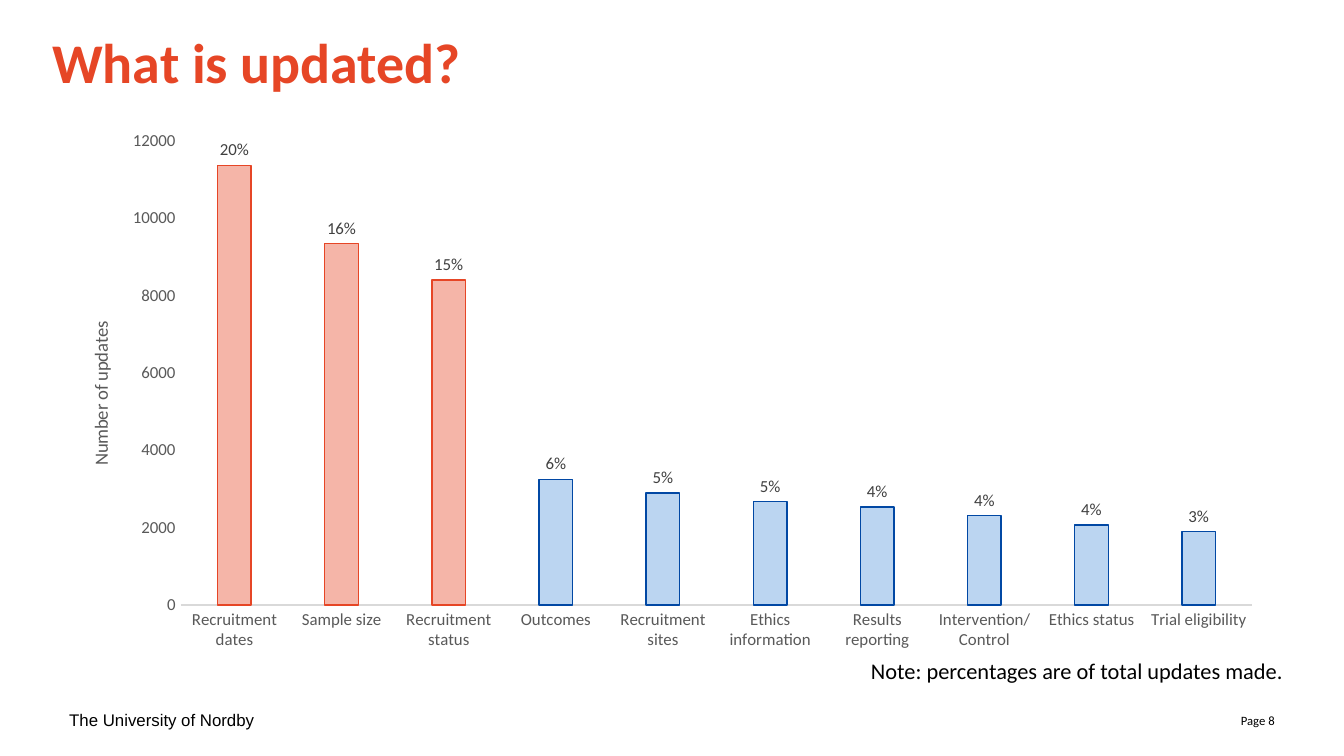
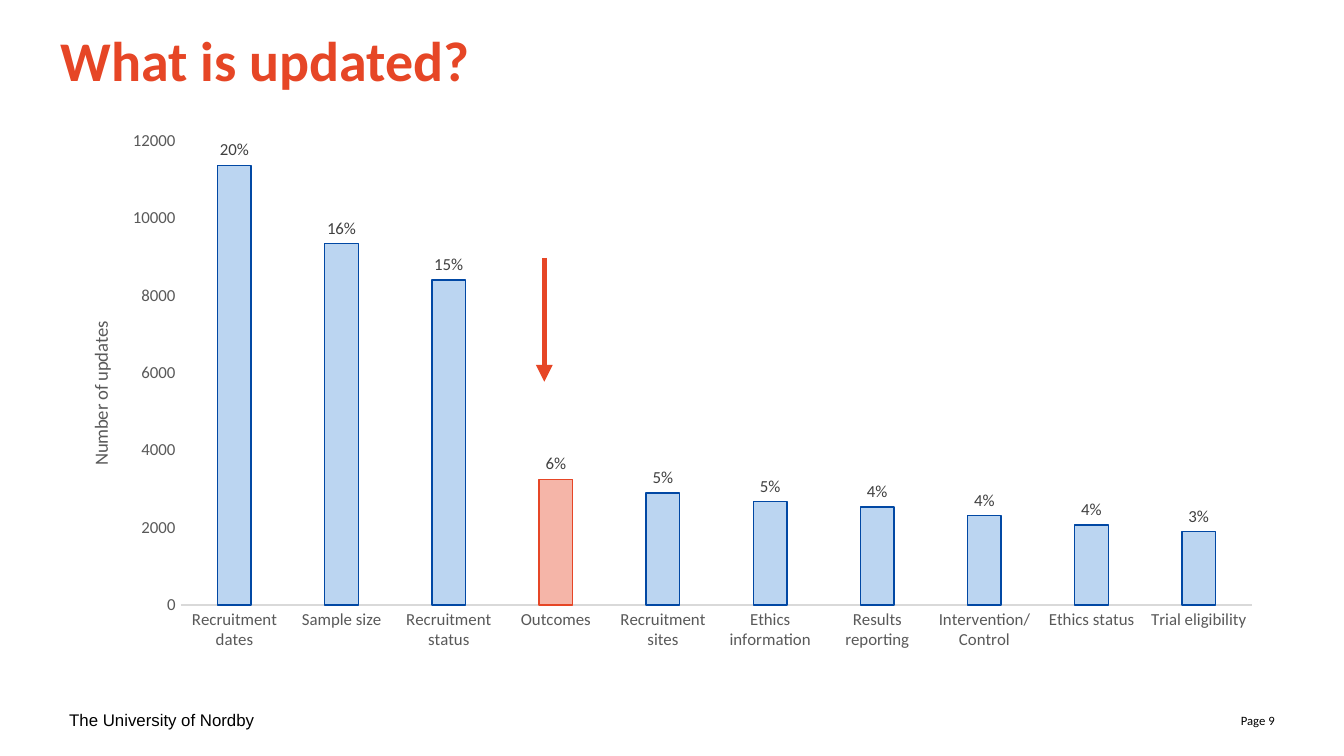
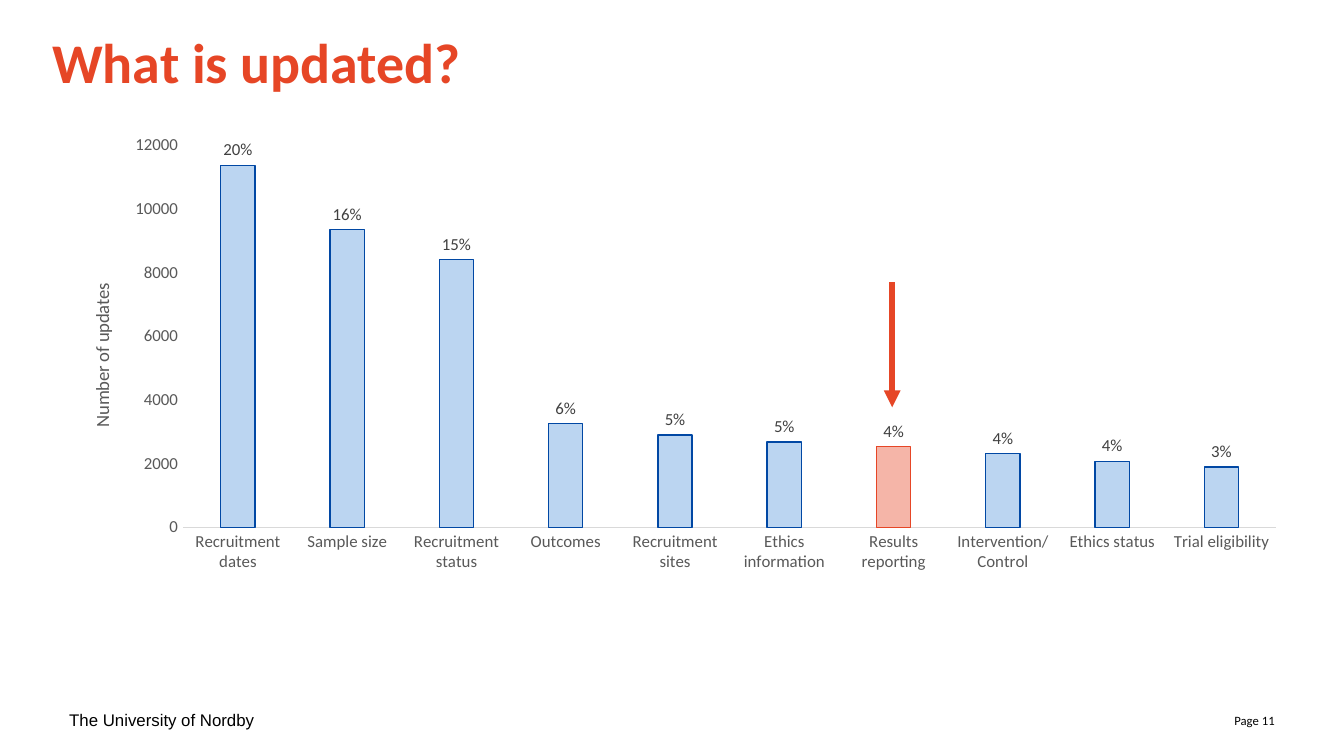
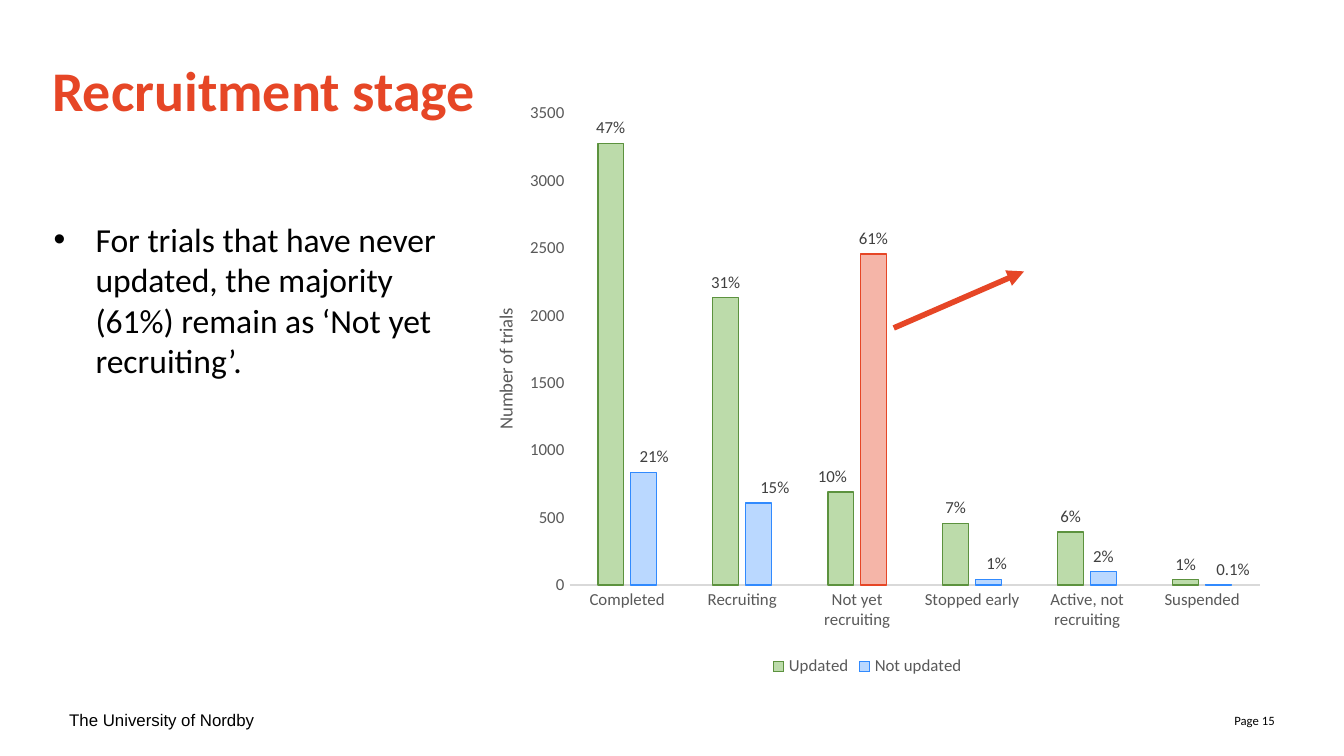
from lxml import etree
from pptx import Presentation
from pptx.chart.data import CategoryChartData
from pptx.dml.color import RGBColor
from pptx.enum.chart import XL_CHART_TYPE, XL_LABEL_POSITION, XL_LEGEND_POSITION, XL_TICK_MARK
from pptx.enum.shapes import MSO_CONNECTOR
from pptx.enum.text import MSO_ANCHOR, PP_ALIGN
from pptx.oxml.ns import qn
from pptx.util import Pt

COLUMN_CLUSTERED = XL_CHART_TYPE.COLUMN_CLUSTERED
OUTSIDE_END = XL_LABEL_POSITION.OUTSIDE_END
LEGEND_BOTTOM = XL_LEGEND_POSITION.BOTTOM
NO_TICKS = XL_TICK_MARK.NONE
STRAIGHT = MSO_CONNECTOR.STRAIGHT
TOP, MIDDLE = MSO_ANCHOR.TOP, MSO_ANCHOR.MIDDLE
LEFT, RIGHT = PP_ALIGN.LEFT, PP_ALIGN.RIGHT

rgb = RGBColor.from_string
BLACK, ACCENT, ACCENT_LIGHT = "000000", "E64626", "F5B5A8"
AXIS_TEXT, LABEL_TEXT, AXIS_LINE = "595959", "404040", "D9D9D9"
FONT = "Calibri"


def add_text(slide, text, box, size, color=BLACK, font=FONT, bold=False,
             align=LEFT, anchor=TOP, inset=True):
    """Add a one-paragraph text box and return its paragraph."""
    shape = slide.shapes.add_textbox(*map(Pt, box))
    frame = shape.text_frame
    frame.word_wrap = True
    frame.vertical_anchor = anchor
    if not inset:
        frame.margin_left = frame.margin_top = frame.margin_right = frame.margin_bottom = 0
    paragraph = frame.paragraphs[0]
    paragraph.text = text
    paragraph.alignment = align
    paragraph.font.name, paragraph.font.size = font, Pt(size)
    paragraph.font.bold = bold
    paragraph.font.color.rgb = rgb(color)
    return paragraph


def set_layout(parent, index, **settings):
    """Give a chart part a manual layout, as fractions of the chart."""
    for old_layout in parent.findall(qn("c:layout")):
        parent.remove(old_layout)
    layout = etree.Element(qn("c:layout"))
    manual = etree.SubElement(layout, qn("c:manualLayout"))
    for name, value in settings.items():
        etree.SubElement(manual, qn(f"c:{name}")).set("val", str(value))
    parent.insert(index, layout)


update_categories = [
    "Recruitment dates", "Sample size", "Recruitment status", "Outcomes", "Recruitment sites",
    "Ethics information", "Results reporting", "Intervention/Control", "Ethics status",
    "Trial eligibility"]
update_series = {
    "name": "Series 1", "fill": "BBD5F1", "line": "0148A4",
    "values": [11366, 9346, 8404, 3248, 2894, 2677, 2529, 2309, 2067, 1896],
    "labels": ["20%", "16%", "15%", "6%", "5%", "5%", "4%", "4%", "4%", "3%"]}
updates_chart = {
    "box": (28, 64.8, 656, 289.5), "categories": update_categories, "series": [update_series],
    "axis_title": "Number of updates", "title_at": (0.027, 0.365),
    "plot": (0.105, 0.037, 0.875, 0.859), "maximum": 12000, "unit": 2000}

# label_shifts: point index -> sideways move as a fraction of the chart width
stage_chart = {
    "box": (245.5, 49, 438.5, 316),
    "categories": ["Completed", "Recruiting", "Not yet recruiting", "Stopped early",
                   "Active, not recruiting", "Suspended"],
    "series": [
        {"name": "Updated", "fill": "BCDBAA", "line": "5C923E",
         "values": [3277, 2133, 691, 457, 392, 39],
         "labels": ["47%", "31%", "10%", "7%", "6%", "1%"],
         "label_shifts": {2: -0.01}},
        {"name": "Not updated", "fill": "BAD8FF", "line": "318AFE",
         "values": [836, 609, 2457, 42, 100, 4],
         "labels": ["21%", "15%", "61%", "1%", "2%", "0.1%"],
         "label_shifts": {0: 0.013, 1: 0.02, 3: 0.01, 5: 0.018}}],
    "axis_title": "Number of trials", "title_at": (0.039, 0.362),
    "plot": (0.136, 0.037, 0.843, 0.8), "maximum": 3500, "unit": 500}

# highlights: (series index, point index)
slides = [
    {"page": 8, "title": "What is updated?", "title_at": (28, 15), "chart": updates_chart,
     "highlights": [(0, 0), (0, 1), (0, 2)],
     "note": "Note: percentages are of total updates made."},
    {"page": 9, "title": "What is updated?", "title_at": (32.5, 13.5), "chart": updates_chart,
     "highlights": [(0, 3)], "arrow": (291.6, 138.2, 291.6, 204.5)},
    {"page": 11, "title": "What is updated?", "title_at": (28, 15),
     "chart": {**updates_chart, "plot": (0.107, 0.045, 0.893, 0.707),
               "title_at": (0.028, 0.294)},
     "highlights": [(0, 6)], "arrow": (478, 151.2, 478, 218.2)},
    {"page": 15, "title": "Recruitment stage", "title_at": (28, 29.5), "chart": stage_chart,
     "highlights": [(1, 2)], "arrow": (478.8, 175.7, 548.6, 145.4),
     "bullet": "For trials that have never updated, the majority (61%) remain as "
               "‘Not yet recruiting’."},
]

presentation = Presentation()
presentation.slide_width, presentation.slide_height = Pt(720), Pt(405)
blank_layout = presentation.slide_layouts[6]

for content in slides:
    slide = presentation.slides.add_slide(blank_layout)
    add_text(slide, f"Page {content['page']}", (522, 375, 168, 21.6), 6.8,
             align=RIGHT, anchor=MIDDLE)
    add_text(slide, "The University of Nordby", (30, 375, 168, 21.6), 9,
             font="Arial", anchor=MIDDLE)
    add_text(slide, content["title"], (*content["title_at"], 664, 38), 30, ACCENT,
             bold=True, inset=False)

    # Chart
    details = content["chart"]
    chart_data = CategoryChartData()
    chart_data.categories = details["categories"]
    for entry in details["series"]:
        chart_data.add_series(entry["name"], entry["values"])
    chart = slide.shapes.add_chart(
        COLUMN_CLUSTERED, *map(Pt, details["box"]), chart_data).chart
    chart.has_title = False
    chart.font.name, chart.font.size = FONT, Pt(10)
    chart.font.color.rgb = rgb(BLACK)
    plot = chart.plots[0]
    plot.gap_width, plot.overlap = 219, -27
    plot.vary_by_categories = False
    set_layout(plot._element.getparent(), 0, layoutTarget="inner", xMode="edge", yMode="edge",
               **dict(zip("xywh", details["plot"])))

    # Axes and legend
    category_axis, value_axis = chart.category_axis, chart.value_axis
    styled_fonts = [category_axis.tick_labels.font, value_axis.tick_labels.font]
    chart.has_legend = len(details["series"]) > 1
    if chart.has_legend:
        chart.legend.position = LEGEND_BOTTOM
        chart.legend.include_in_layout = False
        styled_fonts.append(chart.legend.font)
    for font in styled_fonts:
        font.name, font.size = FONT, Pt(9)
        font.color.rgb = rgb(AXIS_TEXT)
    for axis in (category_axis, value_axis):
        axis.major_tick_mark = axis.minor_tick_mark = NO_TICKS
        axis.has_major_gridlines = False
    category_axis.format.line.color.rgb = rgb(AXIS_LINE)
    category_axis.format.line.width = Pt(0.75)
    value_axis.format.line.fill.background()
    value_axis.minimum_scale, value_axis.maximum_scale = 0, details["maximum"]
    value_axis.major_unit = details["unit"]

    title_frame = value_axis.axis_title.text_frame
    title_frame.text = details["axis_title"]
    title_font = title_frame.paragraphs[0].font
    title_font.name, title_font.size, title_font.bold = FONT, Pt(10), False
    title_font.color.rgb = rgb(AXIS_TEXT)
    title_body = title_frame._txBody.find(qn("a:bodyPr"))
    title_body.set("rot", "-5400000")
    title_body.set("vert", "horz")
    set_layout(value_axis.axis_title._element, 1, xMode="edge", yMode="edge",
               **dict(zip("xy", details["title_at"])))

    # Columns and their labels
    for series_index, (series, entry) in enumerate(zip(plot.series, details["series"])):
        series.format.fill.solid()
        series.format.fill.fore_color.rgb = rgb(entry["fill"])
        series.format.line.color.rgb = rgb(entry["line"])
        series.format.line.width = Pt(0.75)
        labels = series.data_labels
        labels.show_value = True
        labels.position = OUTSIDE_END
        labels.font.name, labels.font.size = FONT, Pt(9)
        labels.font.color.rgb = rgb(LABEL_TEXT)
        for point_index, text in enumerate(entry["labels"]):
            point = series.points[point_index]
            if (series_index, point_index) in content["highlights"]:
                point.format.fill.solid()
                point.format.fill.fore_color.rgb = rgb(ACCENT_LIGHT)
                point.format.line.color.rgb = rgb(ACCENT)
                point.format.line.width = Pt(0.75)
            label = point.data_label
            run = label.text_frame.paragraphs[0].add_run()
            run.text = text
            run.font.name, run.font.size = FONT, Pt(9)
            run.font.color.rgb = rgb(LABEL_TEXT)
            label.position = OUTSIDE_END
            shift = entry.get("label_shifts", {}).get(point_index)
            if shift:
                set_layout(label._get_or_add_dLbl(), 1, x=shift, y=0)

    if "note" in content:
        add_text(slide, content["note"], (459.5, 348.5, 250.5, 21.8), 12)

    if "bullet" in content:
        paragraph = add_text(slide, content["bullet"], (21.6, 113.8, 231, 94.3), 18)
        properties = paragraph._p.get_or_add_pPr()
        properties.set("marL", str(Pt(22.5)))
        properties.set("indent", str(-Pt(22.5)))
        bullet_font = etree.Element(qn("a:buFont"), typeface="Arial")
        bullet_mark = etree.Element(qn("a:buChar"), char="•")
        properties.insert(0, bullet_font)
        properties.insert(1, bullet_mark)

    if "arrow" in content:
        arrow = slide.shapes.add_connector(STRAIGHT, *map(Pt, content["arrow"]))
        arrow.line.color.rgb = rgb(ACCENT)
        arrow.line.width = Pt(3)
        etree.SubElement(arrow.line._get_or_add_ln(), qn("a:tailEnd"), type="triangle")
        etree.SubElement(arrow._element.spPr, qn("a:effectLst"))

presentation.save("out.pptx")
